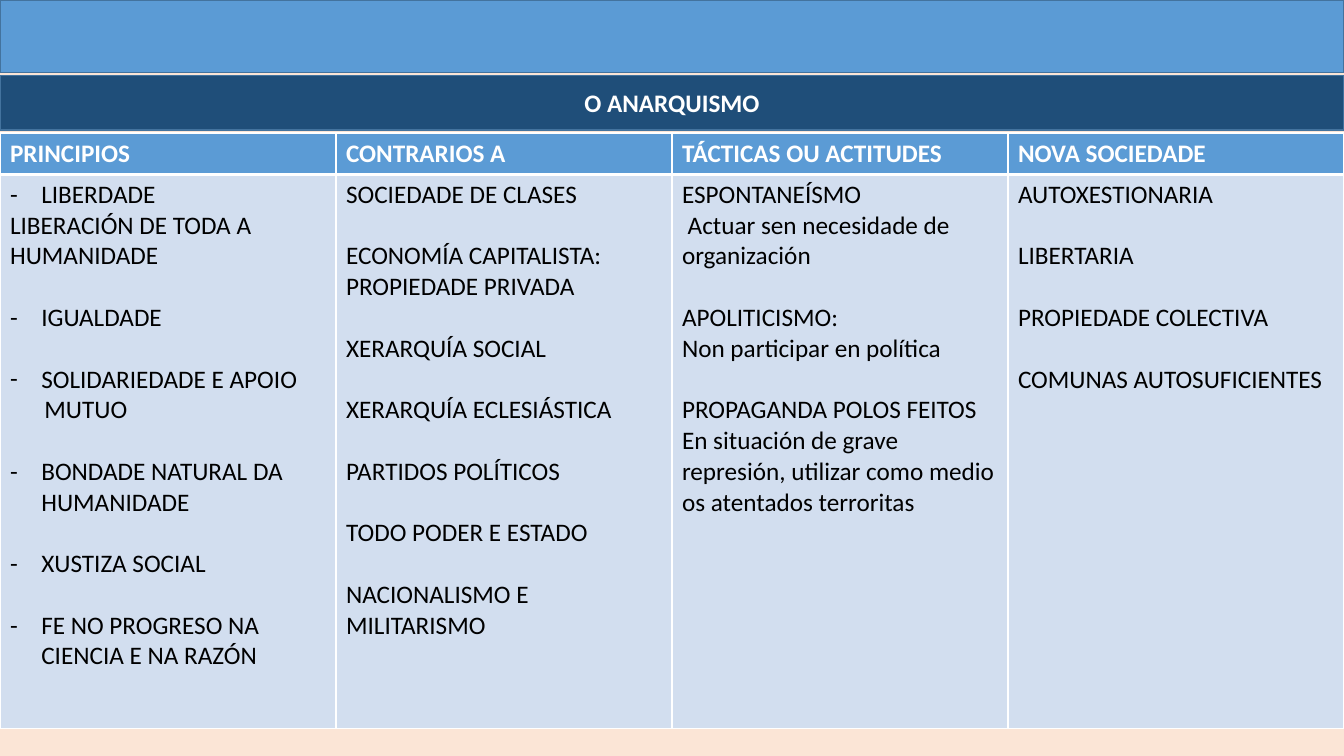
import pptx
import pptx.util
import pptx.dml.color
import pptx.enum.shapes
import pptx.enum.text
import lxml.etree
from pptx.oxml.ns import qn

Inches, Pt = pptx.util.Inches, pptx.util.Pt
RGBColor = pptx.dml.color.RGBColor

PEACH = RGBColor(0xFB, 0xE5, 0xD6)
BLUE = RGBColor(0x5B, 0x9B, 0xD5)
NAVY = RGBColor(0x1F, 0x4E, 0x79)
EDGE = RGBColor(0x43, 0x73, 0x9E)
PALE = RGBColor(0xD2, 0xDE, 0xEF)
WHITE = RGBColor(0xFF, 0xFF, 0xFF)
BLACK = RGBColor(0x00, 0x00, 0x00)

LINE_GAP = Pt(22)
HANGING = Inches(0.31)
HEADER_HEIGHT, BODY_HEIGHT = Inches(0.41), Inches(5.5)

# Each column is a list of groups; "- " opens a bulleted line, "> " an indented one.
COLUMNS = {
    "PRINCIPIOS": [
        ["- LIBERDADE", "LIBERACIÓN DE TODA A HUMANIDADE"],
        ["- IGUALDADE"],
        ["- SOLIDARIEDADE E APOIO", "> MUTUO"],
        ["- BONDADE NATURAL DA HUMANIDADE"],
        ["- XUSTIZA SOCIAL"],
        ["- FE NO PROGRESO NA CIENCIA E NA RAZÓN"],
    ],
    "CONTRARIOS A": [
        ["SOCIEDADE DE CLASES"],
        ["ECONOMÍA CAPITALISTA:", "PROPIEDADE PRIVADA"],
        ["XERARQUÍA SOCIAL"],
        ["XERARQUÍA ECLESIÁSTICA"],
        ["PARTIDOS POLÍTICOS"],
        ["TODO PODER E ESTADO"],
        ["NACIONALISMO E MILITARISMO"],
    ],
    "TÁCTICAS OU ACTITUDES": [
        ["ESPONTANEÍSMO", " Actuar sen necesidade de organización"],
        ["APOLITICISMO:", "Non participar en política"],
        ["PROPAGANDA POLOS FEITOS",
         "En situación de grave represión, utilizar como medio os atentados terroritas"],
    ],
    "NOVA SOCIEDADE": [
        ["AUTOXESTIONARIA"],
        ["LIBERTARIA"],
        ["PROPIEDADE COLECTIVA"],
        ["COMUNAS AUTOSUFICIENTES"],
    ],
}


def write(paragraph, text, color, bold):
    paragraph.text = text
    font = paragraph.runs[0].font
    font.name, font.size, font.bold = "Calibri", Pt(18), bold
    font.color.rgb = color


def paint_cell(cell, fill, top, bottom):
    """Fill a cell and give it white borders; top and bottom are widths in points."""
    cell.fill.solid()
    cell.fill.fore_color.rgb = fill
    properties = cell._tc.get_or_add_tcPr()
    sides = {"a:lnL": 1, "a:lnR": 1, "a:lnT": top, "a:lnB": bottom}
    for position, (side, width) in enumerate(sides.items()):
        border = lxml.etree.Element(qn(side), w=str(Pt(width)))
        solid = lxml.etree.SubElement(border, qn("a:solidFill"))
        lxml.etree.SubElement(solid, qn("a:srgbClr"), val=str(WHITE))
        properties.insert(position, border)


deck = pptx.Presentation()
deck.slide_width, deck.slide_height = Inches(13.33), Inches(7.5)
slide = deck.slides.add_slide(deck.slide_layouts[6])
slide.background.fill.solid()
slide.background.fill.fore_color.rgb = PEACH

for top, height, color, title in [(0, 0.72, BLUE, ""), (0.75, 0.54, NAVY, "O ANARQUISMO")]:
    band = slide.shapes.add_shape(
        pptx.enum.shapes.MSO_SHAPE.RECTANGLE, 0, Inches(top), deck.slide_width, Inches(height))
    band.shadow.inherit = False
    band.fill.solid()
    band.fill.fore_color.rgb = color
    band.line.color.rgb = EDGE
    band.line.width = Pt(1)
    if title:
        band.text_frame.vertical_anchor = pptx.enum.text.MSO_ANCHOR.MIDDLE
        heading = band.text_frame.paragraphs[0]
        heading.alignment = pptx.enum.text.PP_ALIGN.CENTER
        write(heading, title, WHITE, True)

table = slide.shapes.add_table(
    2, len(COLUMNS), 0, Inches(1.32), deck.slide_width, HEADER_HEIGHT + BODY_HEIGHT).table
table.rows[0].height, table.rows[1].height = HEADER_HEIGHT, BODY_HEIGHT

for column, (header, groups) in enumerate(COLUMNS.items()):
    header_cell, body_cell = table.cell(0, column), table.cell(1, column)
    paint_cell(header_cell, BLUE, 1, 3)
    paint_cell(body_cell, PALE, 3, 1)
    write(header_cell.text_frame.paragraphs[0], header, WHITE, True)

    body = body_cell.text_frame
    for group_index, group in enumerate(groups):
        for line_index, line in enumerate(group):
            first = group_index == line_index == 0
            entry = body.paragraphs[0] if first else body.add_paragraph()
            bulleted, indented = line.startswith("- "), line.startswith("> ")
            write(entry, line[2:] if bulleted or indented else line, BLACK, False)
            if line_index == 0 and group_index > 0:
                entry.space_before = LINE_GAP
            layout = entry._p.get_or_add_pPr()
            if indented:
                layout.set("marL", str(Inches(0.34)))
            if bulleted:
                layout.set("marL", str(HANGING))
                layout.set("indent", str(-HANGING))
                lxml.etree.SubElement(layout, qn("a:buFont"), typeface="Calibri")
                lxml.etree.SubElement(layout, qn("a:buChar"), char="-")

deck.save("out.pptx")
